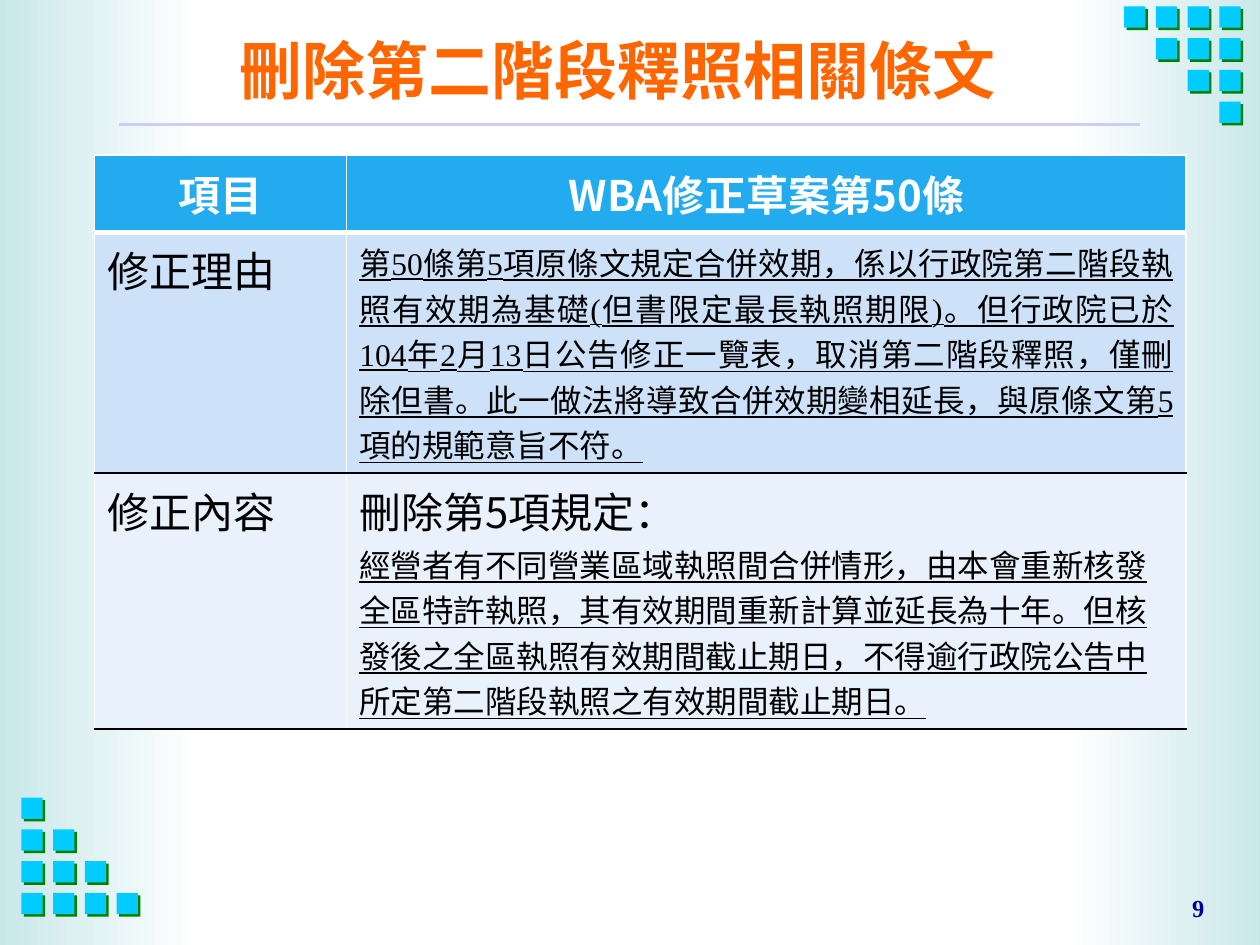
import pptx
import pptx.dml.color
import pptx.enum.shapes
import pptx.enum.text
import pptx.oxml
import pptx.oxml.ns
import pptx.util
from lxml import etree

Cm = pptx.util.Cm
Pt = pptx.util.Pt
RGBColor = pptx.dml.color.RGBColor
Align = pptx.enum.text.PP_ALIGN
Anchor = pptx.enum.text.MSO_ANCHOR
qn = pptx.oxml.ns.qn

WHITE = RGBColor(0xFF, 0xFF, 0xFF)
BLACK = RGBColor(0, 0, 0)
MINT = RGBColor(0xC9, 0xE7, 0xE9)
LAVENDER = RGBColor(0xCC, 0xCC, 0xFF)
GREEN = RGBColor(0, 0x80, 0)
CYAN = RGBColor(0, 0xCC, 0xFF)
NAVY = RGBColor(0, 0, 0x99)
ORANGE = RGBColor(0xFF, 0x66, 0)
HEADER_BLUE = RGBColor(0x23, 0xAB, 0xEF)
ROW_BLUE = RGBColor(0xCD, 0xE2, 0xF9)
ROW_PALE = RGBColor(0xE8, 0xF1, 0xFC)

SANS = "Noto Sans CJK TC"
SERIF = "Times New Roman"

REASON = (
    "第50條第5項原條文規定合併效期，係以行政院第二階段執照有效期為基礎"
    "(但書限定最長執照期限)。但行政院已於104年2月13日公告修正一覽表，"
    "取消第二階段釋照，僅刪除但書。此一做法將導致合併效期變相延長，"
    "與原條文第5項的規範意旨不符。"
)
CLAUSE = (
    "經營者有不同營業區域執照間合併情形，由本會重新核發全區特許執照，"
    "其有效期間重新計算並延長為十年。但核發後之全區執照有效期間截止期日，"
    "不得逾行政院公告中所定第二階段執照之有效期間截止期日。"
)


def write_paragraph(para, text, size, color, face=SANS, bold=False,
                    underline=False, align=Align.LEFT):
    para.text = text
    para.alignment = align
    font = para.font
    font.size, font.name = Pt(size), face
    font.bold, font.underline = bold, underline
    font.color.rgb = color
    latin = para._p.pPr.find(qn("a:defRPr")).find(qn("a:latin"))
    east_asian = etree.Element(qn("a:ea"), typeface=SANS)
    latin.addnext(east_asian)


def add_rectangle(page, left, top, width, height):
    shape = page.shapes.add_shape(
        pptx.enum.shapes.MSO_SHAPE.RECTANGLE,
        Cm(left), Cm(top), Cm(width), Cm(height))
    shape.shadow.inherit = False
    shape.line.fill.background()
    return shape


def add_side_band(page, left, top, width, height, colors):
    fill = add_rectangle(page, left, top, width, height).fill
    fill.gradient()
    fill.gradient_angle = 0
    for stop, color in zip(fill.gradient_stops, colors):
        stop.color.rgb = color


def add_stairs(page, left, top, rows_of_column):
    side, step, offset = 0.43, 0.64, 0.05
    for column, rows in enumerate(rows_of_column):
        for row in rows:
            for shift, color in ((offset, GREEN), (0, CYAN)):
                square = add_rectangle(
                    page, left + column * step + shift,
                    top + row * step + shift, side, side)
                square.fill.solid()
                square.fill.fore_color.rgb = color


def add_title_rule(page, left, top, width):
    rule = page.shapes.add_connector(
        pptx.enum.shapes.MSO_CONNECTOR.STRAIGHT,
        Cm(left), Cm(top), Cm(left + width), Cm(top))
    rule.line.color.rgb = LAVENDER
    rule.line.width = Pt(2.25)
    etree.SubElement(rule._element.spPr, qn("a:effectLst"))


def add_page_number(page, left, top, width, height):
    box = page.shapes.add_textbox(Cm(left), Cm(top), Cm(width), Cm(height))
    frame = box.text_frame
    frame.word_wrap = True
    frame.vertical_anchor = Anchor.MIDDLE
    write_paragraph(frame.paragraphs[0], "9", 14, NAVY, SERIF, bold=True,
                    align=Align.RIGHT)


def place_title(page, left, top, width, height):
    title = page.shapes.title
    title.left, title.top = Cm(left), Cm(top)
    title.width, title.height = Cm(width), Cm(height)
    title.text_frame.vertical_anchor = Anchor.MIDDLE
    write_paragraph(title.text_frame.paragraphs[0], "刪除第二階段釋照相關條文",
                    36, ORANGE, SERIF, bold=True, align=Align.CENTER)
    page.shapes.element.append(title.element)


def set_borders(cell, top, bottom):
    properties = cell._tc.get_or_add_tcPr()
    edges = (("L", WHITE, 1), ("R", WHITE, 1), ("T", *top), ("B", *bottom))
    for position, (edge, color, width) in enumerate(edges):
        line = etree.Element(qn(f"a:ln{edge}"), w=str(Pt(width)))
        fill = etree.SubElement(line, qn("a:solidFill"))
        etree.SubElement(fill, qn("a:srgbClr"), val=str(color))
        properties.insert(position, line)


def add_amendment_table(page, left, top, column_widths, row_heights):
    heading = {"size": 24, "color": WHITE, "bold": True, "align": Align.CENTER}
    label = {"size": 24, "color": BLACK}
    quote = {"size": 18, "color": BLACK, "face": SERIF, "underline": True}
    justified = {**quote, "align": Align.JUSTIFY}
    white_thin, white_thick, black_thin = (WHITE, 1), (WHITE, 3), (BLACK, 1)
    rows = (
        (HEADER_BLUE, white_thin, white_thick,
         [[("項目", heading)], [("WBA修正草案第50條", heading)]]),
        (ROW_BLUE, white_thick, black_thin,
         [[("修正理由", label)], [(REASON, justified)]]),
        (ROW_PALE, black_thin, black_thin,
         [[("修正內容", label)], [("刪除第5項規定：", label), (CLAUSE, quote)]]),
    )
    table = page.shapes.add_table(
        len(rows), len(column_widths), Cm(left), Cm(top),
        Cm(sum(column_widths)), Cm(sum(row_heights))).table
    for column, width in zip(table.columns, column_widths):
        column.width = Cm(width)
    for index, (color, above, below, contents) in enumerate(rows):
        table.rows[index].height = Cm(row_heights[index])
        for cell, paragraphs in zip(table.rows[index].cells, contents):
            cell.fill.solid()
            cell.fill.fore_color.rgb = color
            cell.vertical_anchor = Anchor.TOP if index else Anchor.MIDDLE
            set_borders(cell, above, below)
            frame = cell.text_frame
            for number, (text, style) in enumerate(paragraphs):
                para = frame.add_paragraph() if number else frame.paragraphs[0]
                write_paragraph(para, text, **style)


def main():
    deck = pptx.Presentation()
    deck.slide_width, deck.slide_height = Cm(25.4), Cm(19.05)
    page = deck.slides.add_slide(deck.slide_layouts.get_by_name("Title Only"))
    add_side_band(page, 21.51, 0, 3.99, 19.05, (WHITE, MINT))
    add_side_band(page, 0, 0, 3.99, 19.05, (MINT, WHITE))
    add_title_rule(page, 2.39, 2.51, 20.6)
    add_stairs(page, 0.43, 16.08, [range(column, 4) for column in range(4)])
    add_stairs(page, 22.66, 0.13, [range(column + 1) for column in range(4)])
    add_page_number(page, 19.25, 17.98, 5.28, 0.64)
    place_title(page, 2.41, 0.33, 20.09, 2.13)
    add_amendment_table(page, 1.91, 3.12, (5.08, 16.92), (1.57, 4.83, 5.16))
    deck.save("out.pptx")


if __name__ == "__main__":
    main()
